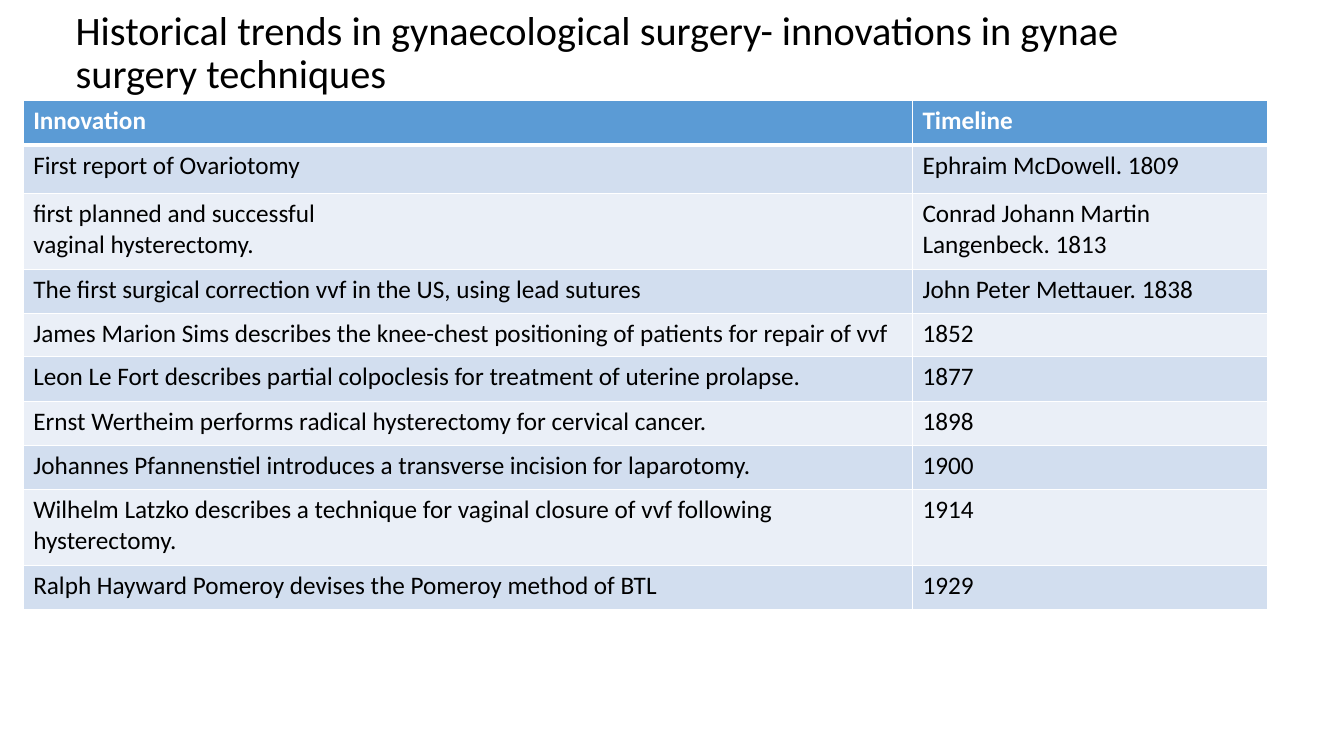
from pptx import Presentation
from pptx.dml.color import RGBColor
from pptx.enum import text as t
from pptx.oxml import parse_xml
from pptx.oxml.ns import nsdecls
from pptx.util import Inches, Pt

FONT = "Calibri"
BLACK = RGBColor(0x00, 0x00, 0x00)
WHITE = RGBColor(0xFF, 0xFF, 0xFF)
BLUE = RGBColor(0x5B, 0x9B, 0xD5)
BANDS = [RGBColor(0xEA, 0xEF, 0xF7), RGBColor(0xD2, 0xDE, 0xEF)]

TITLE = ("Historical trends in gynaecological surgery- "
         "innovations in gynae surgery techniques")
TRENDS = [
    ("Innovation", "Timeline"),
    ("First report of Ovariotomy", "Ephraim McDowell. 1809"),
    ("first planned and successful\nvaginal hysterectomy.",
     "Conrad Johann Martin Langenbeck. 1813"),
    ("The first surgical correction vvf in the US, using lead sutures",
     "John Peter Mettauer. 1838"),
    ("James Marion Sims describes the knee-chest positioning of patients "
     "for repair of vvf", "1852"),
    ("Leon Le Fort describes partial colpoclesis for treatment of "
     "uterine prolapse.", "1877"),
    ("Ernst Wertheim performs radical hysterectomy for cervical cancer.",
     "1898"),
    ("Johannes Pfannenstiel introduces a transverse incision for laparotomy.",
     "1900"),
    ("Wilhelm Latzko describes a technique for vaginal closure of vvf "
     "following hysterectomy.", "1914"),
    ("Ralph Hayward Pomeroy devises the Pomeroy method of BTL", "1929"),
]
WIDTHS = [8.82, 3.52]
HEIGHTS = [0.44, 0.48, 0.75, 0.44, 0.43, 0.44, 0.44, 0.44, 0.75, 0.44]


def write(frame, words, size=18, color=BLACK, bold=False, spacing=1.0):
    frame.word_wrap = True
    frame.text = words
    for para in frame.paragraphs:
        para.alignment = t.PP_ALIGN.LEFT
        para.line_spacing = spacing
        for run in para.runs:
            font = run.font
            font.name, font.size, font.bold = FONT, Pt(size), bold
            font.color.rgb = color


def border(cell, **widths):
    """Draw white cell borders; widths maps L, R, T, B to points."""
    props = cell._tc.get_or_add_tcPr()
    for place, (side, width) in enumerate(widths.items()):
        props.insert(place, parse_xml(
            f'<a:ln{side} {nsdecls("a")} w="{Pt(width)}"><a:solidFill>'
            f'<a:srgbClr val="{WHITE}"/></a:solidFill></a:ln{side}>'))


def add_title(slide):
    title = slide.shapes.title
    title.left, title.top = Inches(0.65), Inches(0.19)
    title.width, title.height = Inches(11.37), Inches(0.69)
    frame = title.text_frame
    frame.auto_size = t.MSO_AUTO_SIZE.NONE
    frame.vertical_anchor = t.MSO_ANCHOR.MIDDLE
    write(frame, TITLE, size=28.8, spacing=0.9)


def add_trends(slide):
    table = slide.shapes.add_table(
        len(TRENDS), len(WIDTHS), Inches(0.23), Inches(1),
        Inches(sum(WIDTHS)), Inches(sum(HEIGHTS))).table
    for column, width in zip(table.columns, WIDTHS):
        column.width = Inches(width)
    for r, (trend, height) in enumerate(zip(TRENDS, HEIGHTS)):
        table.rows[r].height = Inches(height)
        head = r == 0
        for c, words in enumerate(trend):
            cell = table.cell(r, c)
            cell.fill.solid()
            cell.fill.fore_color.rgb = BLUE if head else BANDS[r % 2]
            border(cell, L=1, R=1, T=3 if r == 1 else 1, B=3 if head else 1)
            write(cell.text_frame, words, bold=head,
                  color=WHITE if head else BLACK)


def main():
    deck = Presentation()
    deck.slide_width, deck.slide_height = Inches(13.33), Inches(7.5)
    slide = deck.slides.add_slide(deck.slide_layouts[5])
    add_title(slide)
    add_trends(slide)
    deck.save("out.pptx")


if __name__ == "__main__":
    main()
